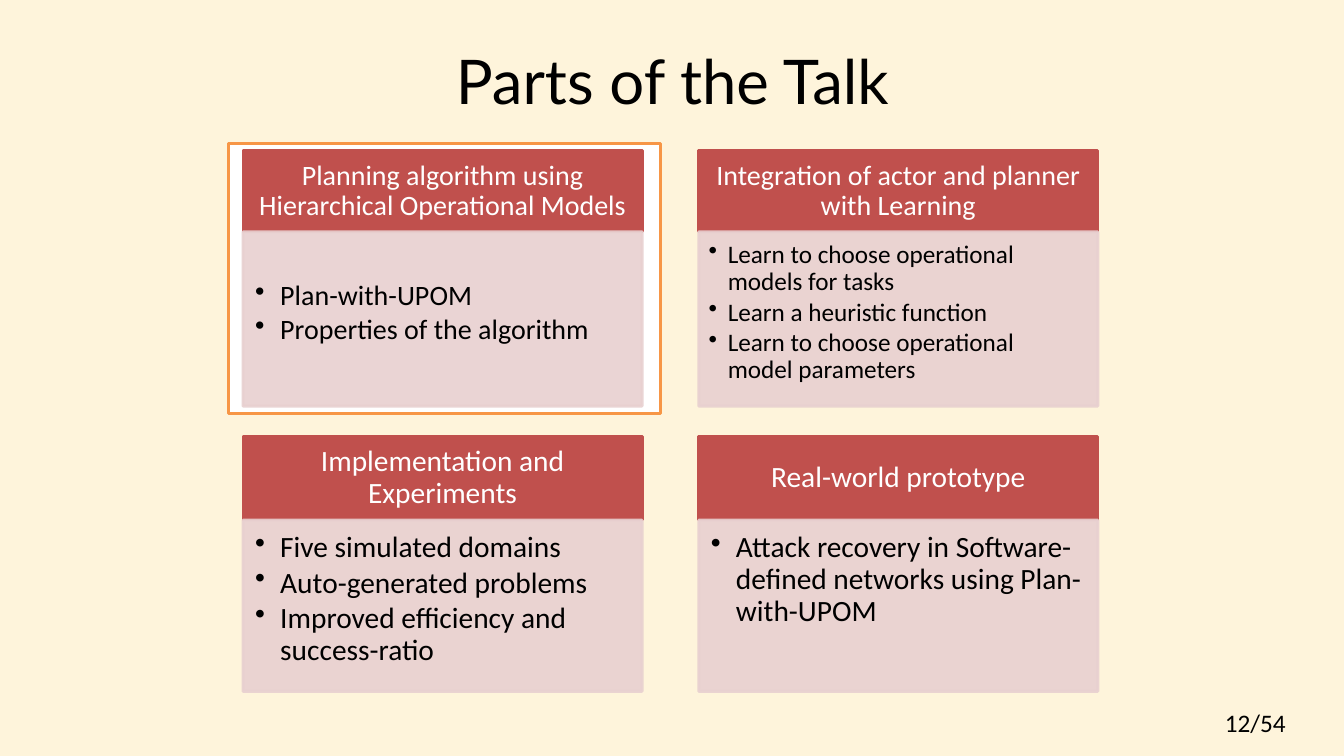
import pptx
import pptx.util
import pptx.dml.color
import pptx.enum.shapes
import pptx.enum.text
import pptx.oxml.ns
import lxml.etree

Inches = pptx.util.Inches
RGBColor = pptx.dml.color.RGBColor
ALIGN = pptx.enum.text.PP_ALIGN
ANCHOR = pptx.enum.text.MSO_ANCHOR

CREAM = RGBColor(0xFE, 0xF4, 0xDB)
RED = RGBColor(0xC0, 0x50, 0x4D)
PINK = RGBColor(0xE8, 0xD0, 0xD0)
ORANGE = RGBColor(0xF7, 0x96, 0x46)
WHITE = RGBColor(0xFF, 0xFF, 0xFF)
BLACK = RGBColor(0, 0, 0)

CARD_WIDTH = 3.96
COLUMNS = (2.41, 6.93)
# Each row: top, header height, body height
ROWS = ((1.49, 0.81, 1.73), (4.33, 0.83, 1.70))

# Each card: heading, heading size, bullets, bullet size, indent, top inset
CARDS = (
    ("Planning algorithm using Hierarchical Operational Models", 20,
     ("Plan-with-UPOM", "Properties of the algorithm"), 20, 0.25, 0.49),
    ("Integration of actor and planner with Learning", 20,
     ("Learn to choose operational models for tasks", "Learn a heuristic function",
      "Learn to choose operational model parameters"), 18, 0.19, 0.1),
    ("Implementation and Experiments", 21,
     ("Five simulated domains", "Auto-generated problems",
      "Improved efficiency and success-ratio"), 21, 0.25, 0.12),
    ("Real-world prototype", 21,
     ("Attack recovery in Software-defined networks using Plan-with-UPOM",),
     21, 0.25, 0.12),
)


def write_text(shape, lines, size, color=BLACK, font="Calibri", align=ALIGN.LEFT,
               anchor=ANCHOR.TOP, insets=(0.1, 0.05, 0.1, 0.05), indent=None,
               line_spacing=None, wrap=True):
    """Fill a shape with paragraphs; an indent in inches makes them bullets."""
    frame = shape.text_frame
    frame.word_wrap = wrap
    frame.vertical_anchor = anchor
    (frame.margin_left, frame.margin_top,
     frame.margin_right, frame.margin_bottom) = map(Inches, insets)
    for index, line in enumerate(lines):
        paragraph = frame.add_paragraph() if index else frame.paragraphs[0]
        paragraph.text = line
        paragraph.alignment = align
        if line_spacing:
            paragraph.line_spacing = line_spacing
        if indent:
            paragraph.space_after = pptx.util.Pt(round(size * 0.13, 1))
            properties = paragraph._p.get_or_add_pPr()
            properties.set("marL", str(Inches(indent)))
            properties.set("indent", str(-Inches(indent)))
            bullet = lxml.etree.SubElement(properties, pptx.oxml.ns.qn("a:buChar"))
            bullet.set("char", "•")
        paragraph.font.name = font
        paragraph.font.size = pptx.util.Pt(size)
        paragraph.font.color.rgb = color


def add_box(slide, left, top, width, height, fill, line, opacity=None):
    shape = slide.shapes.add_shape(
        pptx.enum.shapes.MSO_SHAPE.RECTANGLE,
        Inches(left), Inches(top), Inches(width), Inches(height))
    shape.shadow.inherit = False
    shape.fill.solid()
    shape.fill.fore_color.rgb = fill
    shape.line.color.rgb = line
    shape.line.width = pptx.util.Pt(2)
    if opacity:
        for color in shape._element.spPr.iter(pptx.oxml.ns.qn("a:srgbClr")):
            alpha = lxml.etree.SubElement(color, pptx.oxml.ns.qn("a:alpha"))
            alpha.set("val", str(opacity * 1000))
    return shape


def add_title(slide, left, top, width, height):
    title = slide.shapes.title
    title.left, title.top = Inches(left), Inches(top)
    title.width, title.height = Inches(width), Inches(height)
    write_text(title, ["Parts of the Talk"], 44, font="Lato",
               align=ALIGN.CENTER, anchor=ANCHOR.MIDDLE)


def add_card(slide, left, row, card):
    top, header_height, body_height = row
    heading, heading_size, bullets, bullet_size, indent, top_inset = card
    # Heading band
    header = add_box(slide, left, top, CARD_WIDTH, header_height, RED, RED)
    write_text(header, [heading], heading_size, color=WHITE, align=ALIGN.CENTER,
               anchor=ANCHOR.MIDDLE, insets=(0.16, 0.09, 0.16, 0.09), line_spacing=0.9)
    # Bulleted body
    body = add_box(slide, left, top + header_height, CARD_WIDTH, body_height,
                   PINK, PINK, opacity=90)
    side_inset = 0.1 if bullet_size < 20 else 0.12
    write_text(body, bullets, bullet_size, indent=indent, line_spacing=0.9,
               insets=(side_inset, top_inset, side_inset + 0.04, 0.16))


def add_page_number(slide, left, top, width, height):
    box = slide.shapes.add_textbox(
        Inches(left), Inches(top), Inches(width), Inches(height))
    write_text(box, ["12/54"], 18)


def main():
    presentation = pptx.Presentation()
    presentation.slide_width = Inches(13.33)
    presentation.slide_height = Inches(7.5)
    slide = presentation.slides.add_slide(presentation.slide_layouts[5])
    slide.background.fill.solid()
    slide.background.fill.fore_color.rgb = CREAM

    add_page_number(slide, 12.05, 6.97, 1.23, 0.4)
    # Highlight behind the current part
    add_box(slide, 2.27, 1.42, 4.28, 2.68, WHITE, ORANGE)
    add_title(slide, 2.17, 0.17, 9, 1.25)
    for index, card in enumerate(CARDS):
        add_card(slide, COLUMNS[index % 2], ROWS[index // 2], card)
    presentation.save("out.pptx")


if __name__ == "__main__":
    main()
